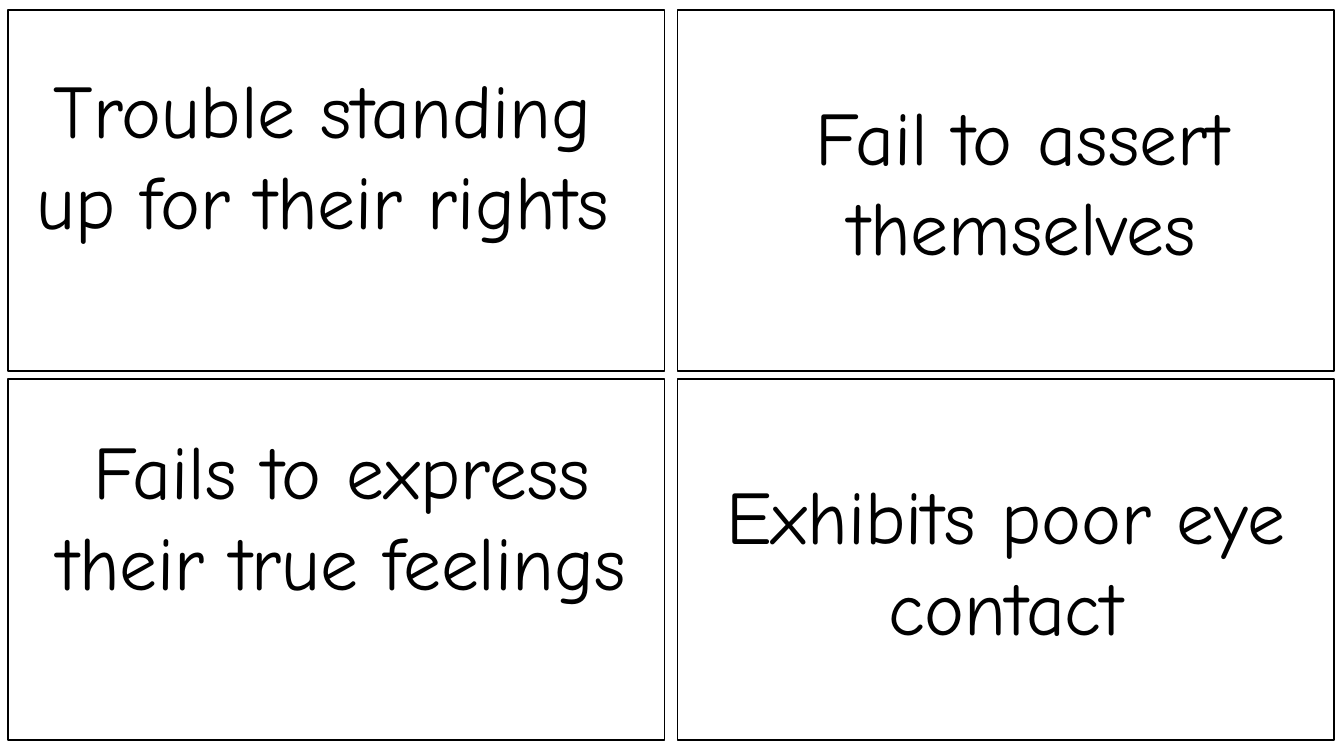
from pptx import Presentation
from pptx.dml.color import RGBColor
from pptx.enum import shapes, text
from pptx.util import Inches, Pt

BLACK = RGBColor(0, 0, 0)
WHITE = RGBColor(255, 255, 255)


def write(shape, words):
    frame = shape.text_frame
    frame.word_wrap = True
    frame.text = words
    para = frame.paragraphs[0]
    para.alignment = text.PP_ALIGN.CENTER
    font = para.runs[0].font
    font.name = "Comic Neue"
    font.size = Pt(54)
    font.color.rgb = BLACK


deck = Presentation()
deck.slide_width = Inches(13.33)
deck.slide_height = Inches(7.5)
slide = deck.slides.add_slide(deck.slide_layouts[6])

for left in (0.08, 6.72):
    for top in (0.1, 3.76):
        card = slide.shapes.add_shape(
            shapes.MSO_SHAPE.RECTANGLE,
            Inches(left), Inches(top), Inches(6.51), Inches(3.58))
        card.shadow.inherit = False
        card.fill.solid()
        card.fill.fore_color.rgb = WHITE
        card.line.color.rgb = BLACK
        card.line.width = Pt(1)

card.text_frame.vertical_anchor = text.MSO_ANCHOR.MIDDLE
write(card, "Exhibits poor eye contact")

labels = [
    (0, 0.58, 2.83, "Trouble standing up for their rights"),
    (6.94, 0.84, 1.92, "Fail to assert themselves"),
    (0.19, 4.16, 2.83, "Fails to express their true feelings"),
]
for left, top, height, words in labels:
    label = slide.shapes.add_textbox(
        Inches(left), Inches(top), Inches(6.4), Inches(height))
    write(label, words)
    label.text_frame.auto_size = text.MSO_AUTO_SIZE.SHAPE_TO_FIT_TEXT

deck.save("out.pptx")
